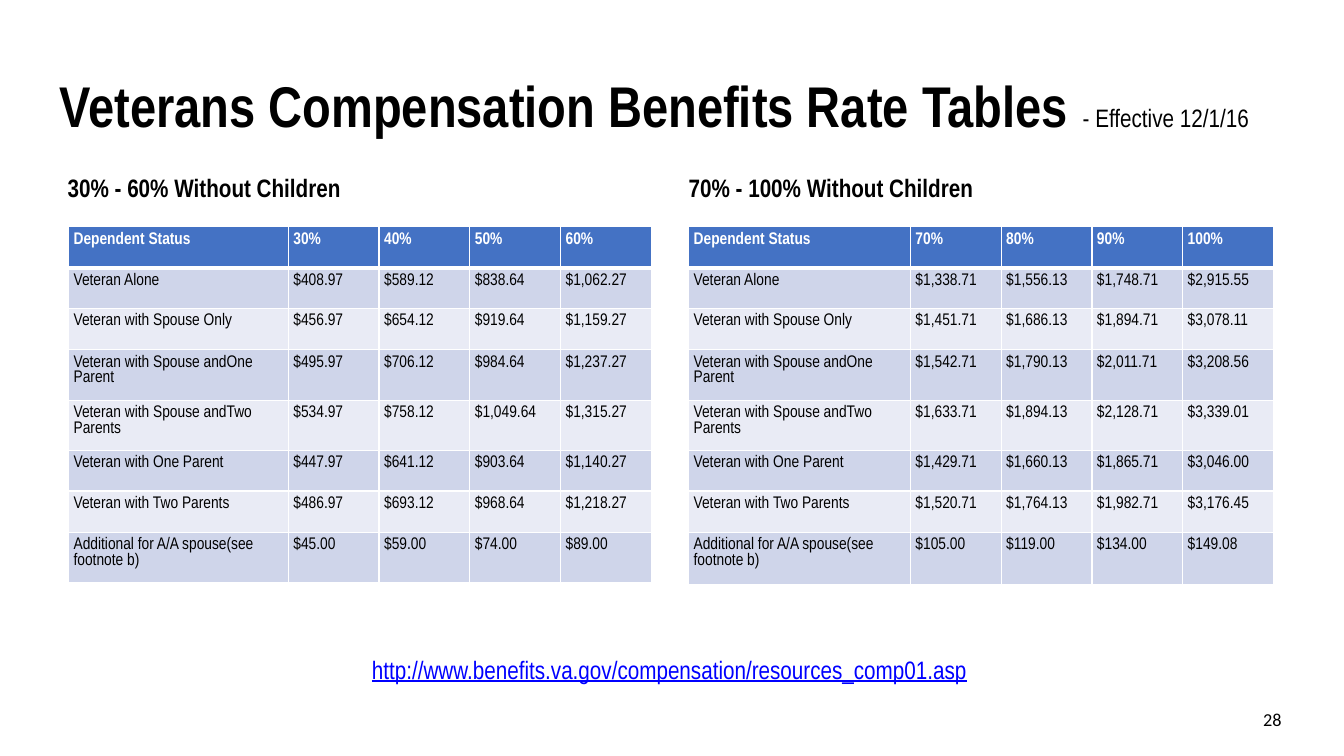
from lxml import etree
from pptx import Presentation
from pptx.dml.color import RGBColor
from pptx.enum.text import MSO_ANCHOR, PP_ALIGN
from pptx.oxml.ns import qn
from pptx.util import Inches, Pt

LEFT, CENTER, RIGHT = PP_ALIGN.LEFT, PP_ALIGN.CENTER, PP_ALIGN.RIGHT
TOP, MIDDLE = MSO_ANCHOR.TOP, MSO_ANCHOR.MIDDLE

# Content
TITLE = "Veterans Compensation Benefits Rate Tables "
EFFECTIVE = "- Effective 12/1/16"
LINK = "http://www.benefits.va.gov/compensation/resources_comp01.asp"
PAGE_NUMBER = "28"
STATUSES = [
    "Dependent Status",
    "Veteran Alone",
    "Veteran with Spouse Only",
    "Veteran with Spouse andOne Parent",
    "Veteran with Spouse andTwo Parents",
    "Veteran with One Parent",
    "Veteran with Two Parents",
    "Additional for A/A spouse(see footnote b)",
]
RATE_TABLES = [
    {
        "heading": "30% - 60% Without Children",
        "heading_at": (0.67, 1.71, 2.72, 0.29),
        "left": 0.68, "status_width": 2.18, "last_height": 0.5,
        "rates": [
            ("30%", "40%", "50%", "60%"),
            ("$408.97", "$589.12", "$838.64", "$1,062.27"),
            ("$456.97", "$654.12", "$919.64", "$1,159.27"),
            ("$495.97", "$706.12", "$984.64", "$1,237.27"),
            ("$534.97", "$758.12", "$1,049.64", "$1,315.27"),
            ("$447.97", "$641.12", "$903.64", "$1,140.27"),
            ("$486.97", "$693.12", "$968.64", "$1,218.27"),
            ("$45.00", "$59.00", "$74.00", "$89.00"),
        ],
    },
    {
        "heading": "70% - 100% Without Children",
        "heading_at": (6.83, 1.71, 2.84, 0.29),
        "left": 6.83, "status_width": 2.2, "last_height": 0.52,
        "rates": [
            ("70%", "80%", "90%", "100%"),
            ("$1,338.71", "$1,556.13", "$1,748.71", "$2,915.55"),
            ("$1,451.71", "$1,686.13", "$1,894.71", "$3,078.11"),
            ("$1,542.71", "$1,790.13", "$2,011.71", "$3,208.56"),
            ("$1,633.71", "$1,894.13", "$2,128.71", "$3,339.01"),
            ("$1,429.71", "$1,660.13", "$1,865.71", "$3,046.00"),
            ("$1,520.71", "$1,764.13", "$1,982.71", "$3,176.45"),
            ("$105.00", "$119.00", "$134.00", "$149.08"),
        ],
    },
]

THEME = {
    "font": "Arial Narrow", "number_font": "Calibri",
    "ink": "000000", "white": "FFFFFF", "link": "0000FF",
    "header": "4472C4", "bands": ("E9EBF5", "CFD5EA"),
    "title": 41, "body": 18, "cell": 12, "number": 13,
}
INSET = 0.05
TABLE_TOP = 2.25
RATE_WIDTH = 0.9
ROW_HEIGHTS = [0.41, 0.4, 0.41, 0.5, 0.5, 0.4, 0.41]


def style(span, size, color=THEME["ink"], bold=False, font=THEME["font"]):
    span.font.name = font
    span.font.size = Pt(size)
    span.font.bold = bold
    span.font.color.rgb = RGBColor.from_string(color)


def add_text(page, at, text, align=LEFT, anchor=TOP, inset=INSET, wrap=True):
    box = page.shapes.add_textbox(*map(Inches, at))
    frame = box.text_frame
    frame.word_wrap = wrap
    frame.vertical_anchor = anchor
    frame.margin_left = frame.margin_right = Inches(inset)
    frame.margin_top = frame.margin_bottom = Inches(inset)
    frame.text = text
    para = frame.paragraphs[0]
    para.alignment = align
    return para


def set_borders(cell, top, bottom):
    properties = cell._tc.get_or_add_tcPr()
    for side, points in (("L", 1), ("R", 1), ("T", top), ("B", bottom)):
        line = etree.SubElement(properties, qn(f"a:ln{side}"), w=str(Pt(points)))
        fill = etree.SubElement(line, qn("a:solidFill"))
        etree.SubElement(fill, qn("a:srgbClr"), val=THEME["white"])


def fill_cell(cell, text, row):
    header = row == 0
    set_borders(cell, top=3 if row == 1 else 1, bottom=3 if header else 1)
    cell.fill.solid()
    color = THEME["header"] if header else THEME["bands"][row % 2]
    cell.fill.fore_color.rgb = RGBColor.from_string(color)
    cell.margin_left = cell.margin_right = Inches(INSET)
    cell.margin_top = cell.margin_bottom = Inches(INSET)
    cell.text_frame.text = text
    span = cell.text_frame.paragraphs[0].runs[0]
    style(span, THEME["cell"], THEME["white" if header else "ink"], header)


def add_rate_table(page, data):
    heights = ROW_HEIGHTS + [data["last_height"]]
    widths = [data["status_width"]] + [RATE_WIDTH] * len(data["rates"][0])
    at = (data["left"], TABLE_TOP, sum(widths), sum(heights))
    table = page.shapes.add_table(
        len(heights), len(widths), *map(Inches, at)).table
    table.horz_banding = False
    for column, width in zip(table.columns, widths):
        column.width = Inches(width)
    for row, (status, rates) in enumerate(zip(STATUSES, data["rates"])):
        table.rows[row].height = Inches(heights[row])
        for column, text in enumerate((status, *rates)):
            fill_cell(table.cell(row, column), text, row)


def main():
    deck = Presentation()
    deck.slide_width, deck.slide_height = Inches(13.33), Inches(7.5)
    page = deck.slides.add_slide(deck.slide_layouts[6])

    # Title with effective date
    para = add_text(page, (0.54, 0.68, 12.58, 0.81), TITLE, anchor=MIDDLE)
    para.line_spacing = 0.9
    style(para.runs[0], THEME["title"], bold=True)
    span = para.add_run()
    span.text = EFFECTIVE
    style(span, THEME["body"])

    # Rate tables and their headings
    for data in RATE_TABLES:
        add_rate_table(page, data)
        para = add_text(page, data["heading_at"], data["heading"],
                        inset=0, wrap=False)
        style(para.runs[0], THEME["body"], bold=True)

    # Web address
    para = add_text(page, (0.64, 6.44, 12, 0.39), LINK, align=CENTER)
    style(para.runs[0], THEME["body"], THEME["link"])
    para.runs[0].font.underline = True

    # Page number, wide enough to stay on one line
    para = add_text(page, (12.36, 6.98, 0.4, 0.31), PAGE_NUMBER,
                    align=RIGHT, anchor=MIDDLE)
    style(para.runs[0], THEME["number"], font=THEME["number_font"])

    deck.save("out.pptx")


if __name__ == "__main__":
    main()
